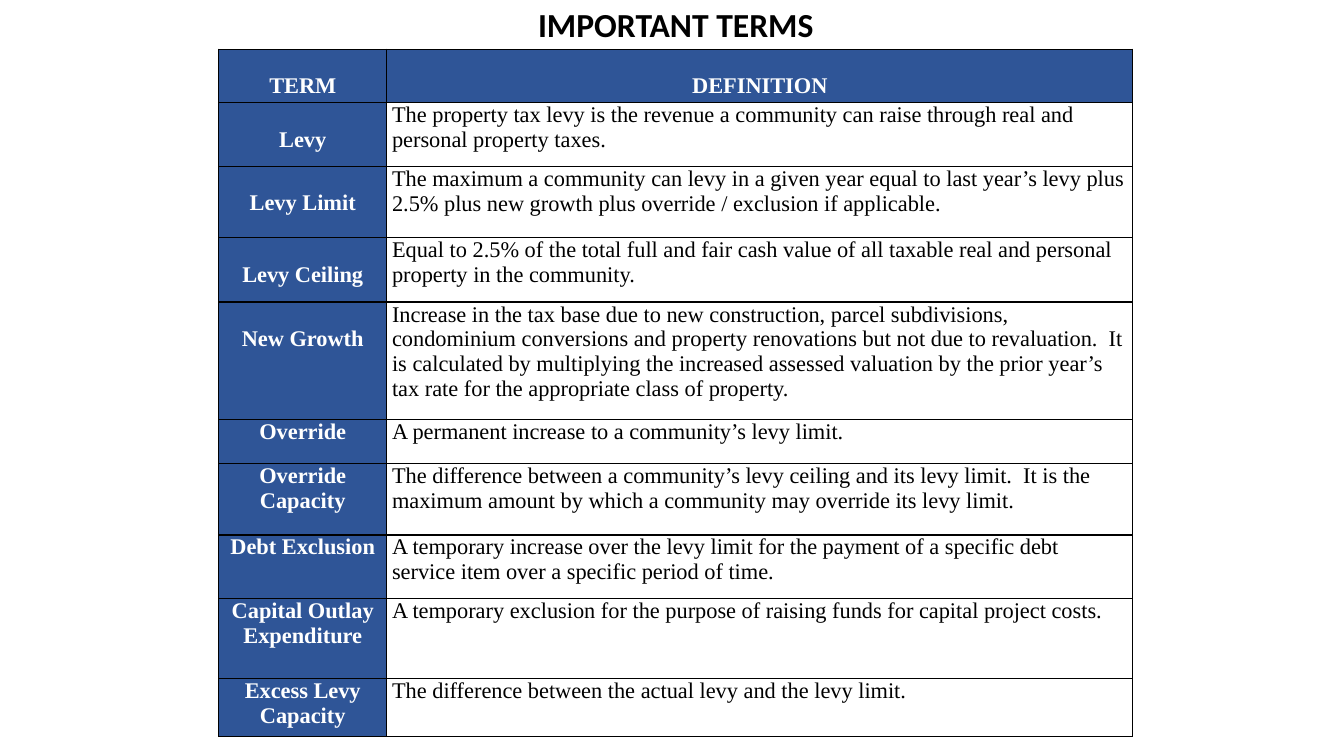
import pptx
import pptx.util
import pptx.dml.color
import pptx.enum.text
import pptx.oxml
import pptx.oxml.ns

Cm, Pt = pptx.util.Cm, pptx.util.Pt
RGB = pptx.dml.color.RGBColor
ALIGN = pptx.enum.text.PP_ALIGN

BLUE = RGB(0x2F, 0x55, 0x97)
WHITE = RGB(0xFF, 0xFF, 0xFF)
BLACK = RGB(0, 0, 0)

TITLE = "IMPORTANT TERMS"
# Term, definition, row height in cm
ROWS = [
    ("TERM", "DEFINITION", 1.35),
    ("Levy", "The property tax levy is the revenue a community can raise "
     "through real and personal property taxes.", 1.6),
    ("Levy Limit", "The maximum a community can levy in a given year equal to "
     "last year’s levy plus 2.5% plus new growth plus override / exclusion "
     "if applicable.", 1.8),
    ("Levy Ceiling", "Equal to 2.5% of the total full and fair cash value of "
     "all taxable real and personal property in the community.", 1.62),
    ("New Growth", "Increase in the tax base due to new construction, parcel "
     "subdivisions, condominium conversions and property renovations but not "
     "due to revaluation.  It is calculated by multiplying the increased "
     "assessed valuation by the prior year’s tax rate for the appropriate "
     "class of property.", 2.97),
    ("Override", "A permanent increase to a community’s levy limit.", 1.09),
    ("Override Capacity", "The difference between a community’s levy ceiling "
     "and its levy limit.  It is the maximum amount by which a community may "
     "override its levy limit.", 1.81),
    ("Debt Exclusion", "A temporary increase over the levy limit for the "
     "payment of a specific debt service item over a specific period of "
     "time.", 1.6),
    ("Capital Outlay Expenditure", "A temporary exclusion for the purpose of "
     "raising funds for capital project costs.", 2.01),
    ("Excess Levy Capacity",
     "The difference between the actual levy and the levy limit.", 1.47),
]
LOWERED = 5  # the first rows start their label one line down
LINE = 0.62
COLS = (4.24, 18.8)
LEFT, TOP = 5.51, 1.24

HEAD = {"name": "Times New Roman", "size": Pt(16), "bold": True}
BODY = {**HEAD, "bold": False}
BANNER = {"name": "Calibri", "size": Pt(24), "bold": True}


def write(frame, text, form, color, align):
    para = frame.paragraphs[0]
    para.alignment = align
    run = para.add_run()
    run.text = text
    for key, value in form.items():
        setattr(run.font, key, value)
    run.font.color.rgb = color


def frame_cell(cell):
    """Draw a thin black border on all four sides."""
    props = cell._tc.get_or_add_tcPr()
    for i, side in enumerate("LRTB"):
        props.insert(i, pptx.oxml.parse_xml(
            f'<a:ln{side} {pptx.oxml.ns.nsdecls("a")} w="12700"><a:solidFill>'
            f'<a:srgbClr val="{BLACK}"/></a:solidFill></a:ln{side}>'))


def fill_cell(cell, text, label, low):
    margins = {"left": 0.13, "right": 0.13, "top": LINE if low else 0,
               "bottom": 0}
    for side, size in margins.items():
        setattr(cell, "margin_" + side, Cm(size))
    if label:
        cell.fill.solid()
        cell.fill.fore_color.rgb = BLUE
        write(cell.text_frame, text, HEAD, WHITE, ALIGN.CENTER)
    else:
        cell.fill.background()
        write(cell.text_frame, text, BODY, BLACK, ALIGN.LEFT)
    frame_cell(cell)


def main():
    deck = pptx.Presentation()
    deck.slide_width, deck.slide_height = Cm(33.87), Cm(19.05)
    slide = deck.slides.add_slide(deck.slide_layouts[6])

    high = sum(row[2] for row in ROWS)
    table = slide.shapes.add_table(len(ROWS), len(COLS), Cm(LEFT), Cm(TOP),
                                   Cm(sum(COLS)), Cm(high)).table
    table.horz_banding = False
    for col, width in zip(table.columns, COLS):
        col.width = Cm(width)
    for r, (*texts, height) in enumerate(ROWS):
        table.rows[r].height = Cm(height)
        for c, text in enumerate(texts):
            label = r == 0 or c == 0
            fill_cell(table.cell(r, c), text, label, label and r < LOWERED)

    box = slide.shapes.add_textbox(Cm(LEFT), Cm(-0.03), Cm(sum(COLS)), Cm(1.27))
    box.text_frame.word_wrap = True
    write(box.text_frame, TITLE, BANNER, BLACK, ALIGN.CENTER)
    deck.save("out.pptx")


if __name__ == "__main__":
    main()
